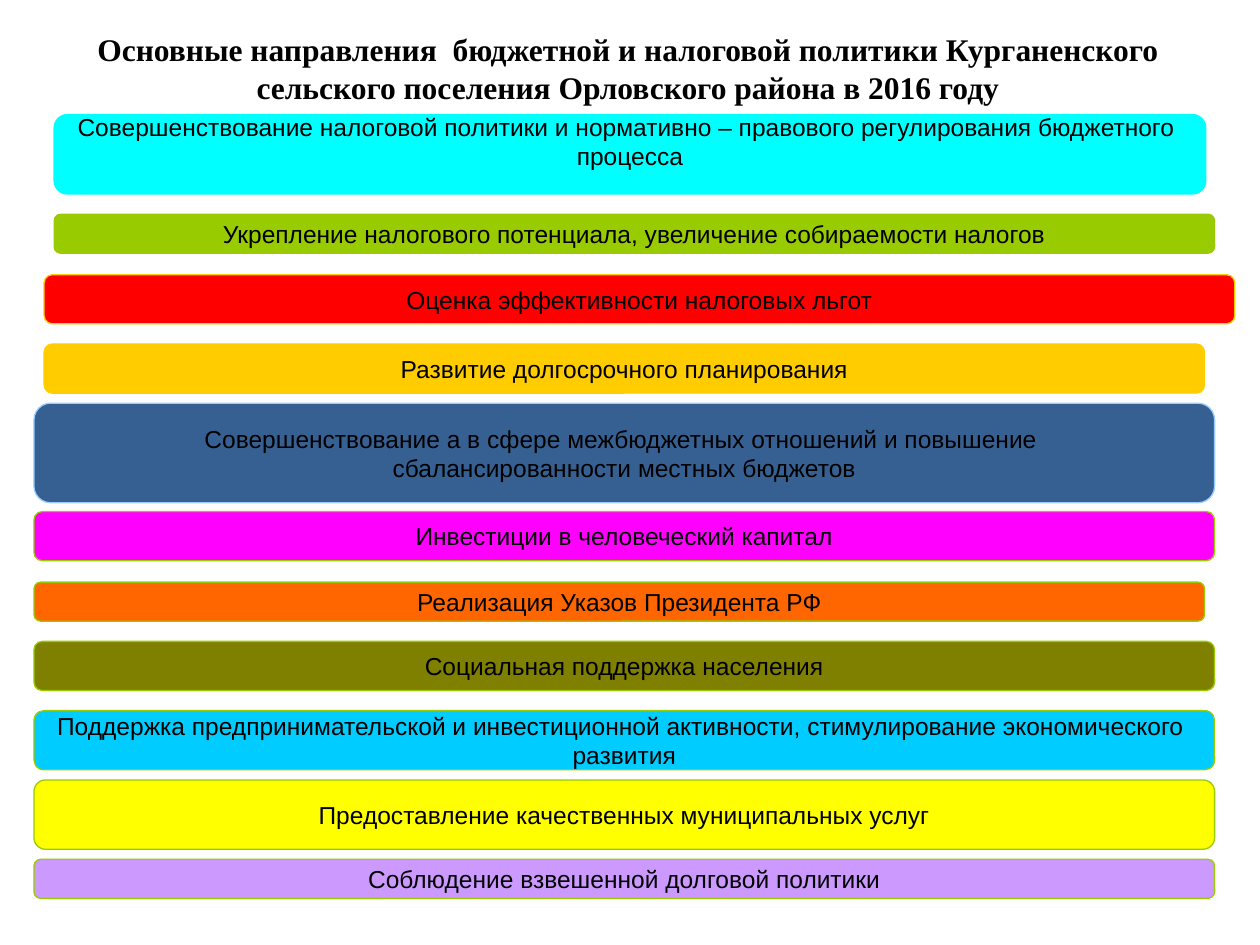
from dataclasses import dataclass

from pptx import Presentation
from pptx.dml.color import RGBColor
from pptx.enum.shapes import MSO_SHAPE
from pptx.enum.text import MSO_ANCHOR, PP_ALIGN
from pptx.util import Inches, Pt

COLORS = {
    "black": "000000",
    "cyan": "00FFFF",
    "green": "99CC00",
    "red": "FF0000",
    "gold": "FFCC00",
    "navy": "376092",
    "pale blue": "99CCFF",
    "magenta": "FF00FF",
    "orange": "FF6600",
    "olive": "808000",
    "sky": "00CCFF",
    "yellow": "FFFF00",
    "lilac": "CC99FF",
}
TITLE = (
    "Основные направления  бюджетной и налоговой политики Курганенского "
    "сельского поселения Орловского района в 2016 году"
)
TITLE_FONT = {"name": "Times New Roman", "size": Pt(18), "bold": True}
BAR_FONT = {"name": "Arial", "size": Pt(14), "bold": False}


@dataclass
class Bar:
    lines: tuple[str, ...]
    top: float
    height: float
    fill: str
    line: str = "green"
    left: float = 0.27
    width: float = 9.37
    bottom_margin: float = 0.05


BARS = [
    Bar(
        (
            "Совершенствование налоговой политики и нормативно – правового регулирования бюджетного ",
            "процесса",
        ),
        0.91, 0.63, "cyan", "cyan", 0.43, 9.14, 0.26,
    ),
    Bar(
        ("Укрепление налогового потенциала, увеличение собираемости налогов",),
        1.7, 0.31, "green", left=0.43, width=9.21,
    ),
    Bar(("Оценка эффективности налоговых льгот",), 2.18, 0.39, "red", "gold", 0.35, 9.45),
    Bar(("Развитие долгосрочного планирования",), 2.73, 0.39, "gold", "gold", 0.35, 9.21),
    Bar(
        (
            "Совершенствование а в сфере межбюджетных отношений и повышение ",
            "сбалансированности местных бюджетов",
        ),
        3.2, 0.79, "navy", "pale blue",
    ),
    Bar(("Инвестиции в человеческий капитал",), 4.06, 0.39, "magenta"),
    Bar(("Реализация Указов Президента РФ",), 4.62, 0.31, "orange", width=9.29),
    Bar(("Социальная поддержка населения",), 5.09, 0.39, "olive"),
    Bar(
        (
            "Поддержка предпринимательской и инвестиционной активности, стимулирование экономического ",
            "развития",
        ),
        5.64, 0.47, "sky",
    ),
    Bar(("Предоставление качественных муниципальных услуг",), 6.19, 0.55, "yellow"),
    Bar(("Соблюдение взвешенной долговой политики",), 6.82, 0.31, "lilac"),
]


def color(name: str) -> RGBColor:
    return RGBColor.from_string(COLORS[name])


def apply(target, values: dict) -> None:
    for name, value in values.items():
        setattr(target, name, value)


def write_text(shape, lines: tuple[str, ...], font: dict, wrap: bool, bottom_margin: float) -> None:
    frame = shape.text_frame
    apply(frame, {
        "word_wrap": wrap,
        "vertical_anchor": MSO_ANCHOR.MIDDLE,
        "margin_bottom": Inches(bottom_margin),
    })
    frame.text = "\n".join(lines)
    for paragraph in frame.paragraphs:
        paragraph.alignment = PP_ALIGN.CENTER
        for run in paragraph.runs:
            apply(run.font, font)
            run.font.color.rgb = color("black")


def draw_title(slide) -> None:
    shape = slide.shapes.add_textbox(Inches(0.47), Inches(0.44), Inches(9.03), Inches(0.47))
    write_text(shape, (TITLE,), TITLE_FONT, True, 0.32)


def draw_bar(slide, bar: Bar) -> None:
    shape = slide.shapes.add_shape(
        MSO_SHAPE.ROUNDED_RECTANGLE,
        Inches(bar.left), Inches(bar.top), Inches(bar.width), Inches(bar.height),
    )
    shape.shadow.inherit = False
    shape.fill.solid()
    shape.fill.fore_color.rgb = color(bar.fill)
    shape.line.color.rgb = color(bar.line)
    shape.line.width = Pt(0.75)
    write_text(shape, bar.lines, BAR_FONT, False, bar.bottom_margin)


def main() -> None:
    presentation = Presentation()
    apply(presentation, {"slide_width": Inches(10), "slide_height": Inches(7.5)})
    slide = presentation.slides.add_slide(presentation.slide_layouts[6])
    draw_title(slide)
    for bar in BARS:
        draw_bar(slide, bar)
    presentation.save("out.pptx")


if __name__ == "__main__":
    main()
